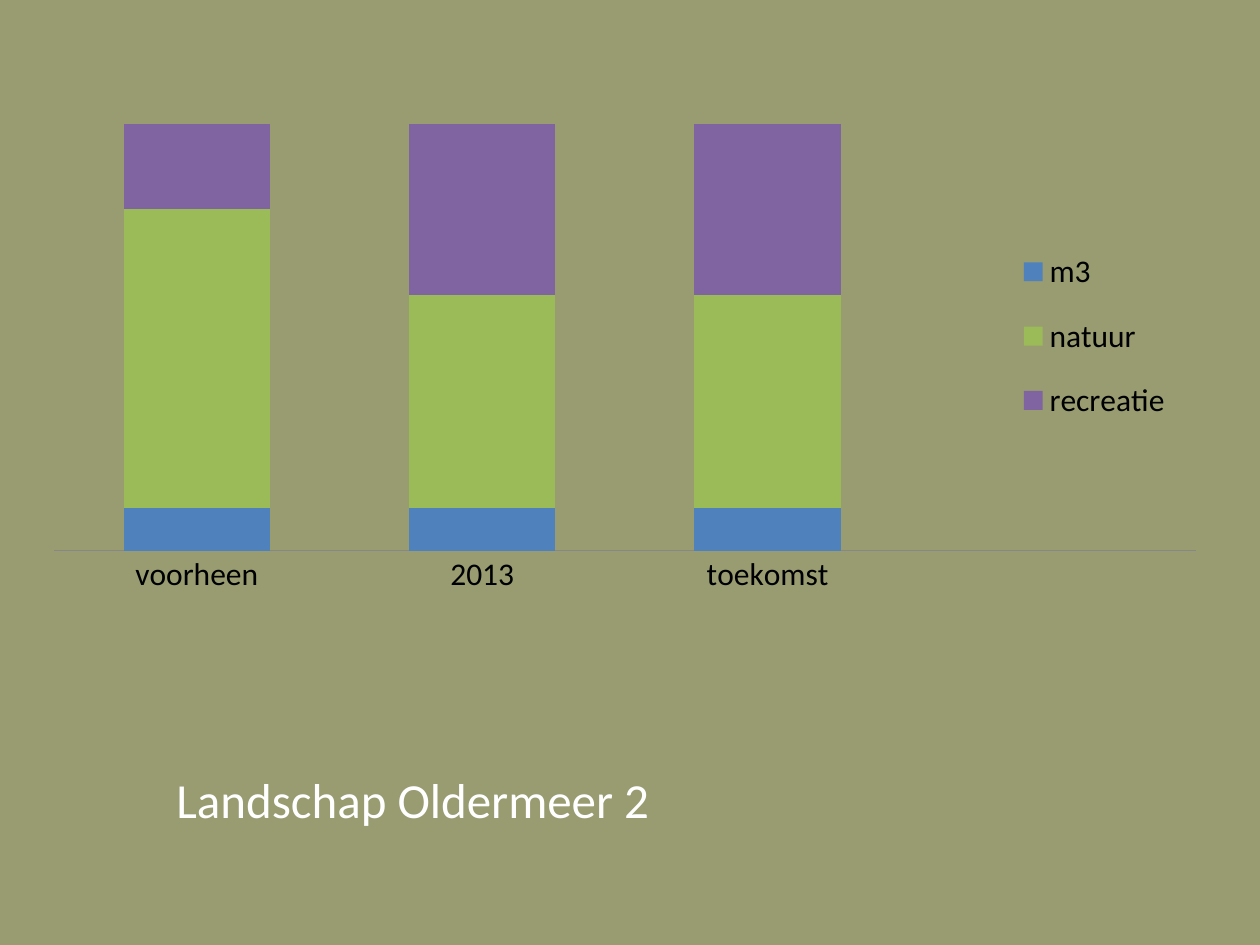
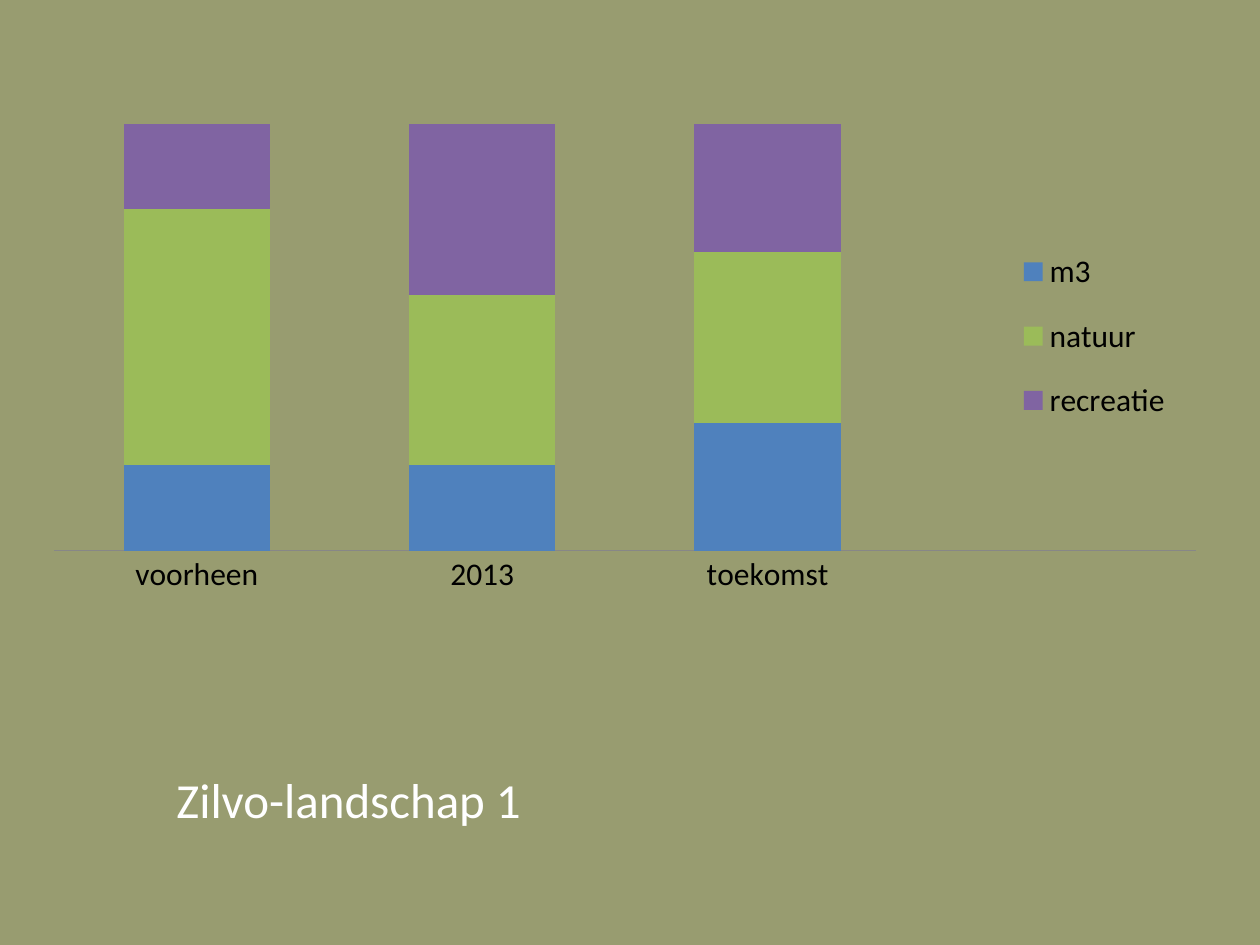
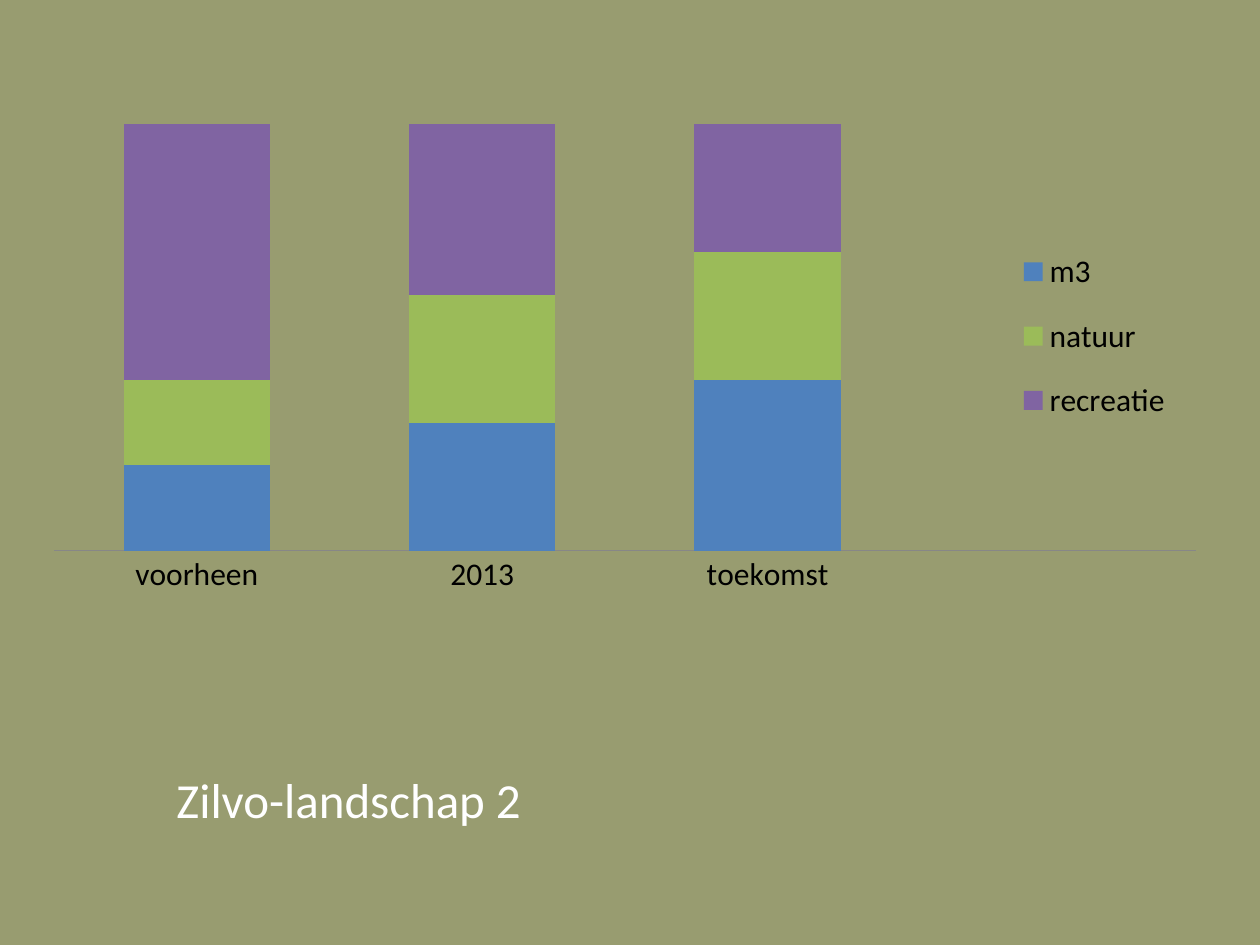
from dataclasses import dataclass

from lxml.etree import SubElement
from pptx import Presentation
from pptx.chart.data import CategoryChartData
from pptx.dml.color import RGBColor
from pptx.enum.chart import XL_CHART_TYPE as ChartType
from pptx.enum.chart import XL_LEGEND_POSITION as LegendPosition
from pptx.enum.chart import XL_TICK_LABEL_POSITION as LabelPosition
from pptx.enum.chart import XL_TICK_MARK as TickMark
from pptx.enum.text import MSO_ANCHOR as Anchor
from pptx.enum.text import MSO_AUTO_SIZE as AutoSize
from pptx.enum.text import PP_ALIGN as Align
from pptx.oxml.ns import qn
from pptx.util import Inches, Pt


@dataclass(frozen=True)
class Theme:
    """Colours, type and boxes (percentages of their parent) that all slides use."""
    background: str = "989C70"
    title_color: str = "FFFFFF"
    chart_text: str = "000000"
    axis_line: str = "878787"
    series_colors: tuple = ("4F81BD", "9BBB59", "8064A2")
    font: str = "Calibri"
    title_size: int = 28
    chart_size: int = 18
    chart_box: tuple = (2.8, 4.85, 93.7, 68.27)
    title_box: tuple = (13, 81.5, 66.9, 7.1)
    plot_box: tuple = (1.6, 12.1, 96.7, 66.2)
    legend_box: tuple = (81.7, 28, 16, 34)


THEME = Theme()
CATEGORIES = ("voorheen", "2013", "toekomst", "")
SERIES_NAMES = ("m3", "natuur", "recreatie")
LANDSCAPES = {
    "Landschap Oldermeer 2": ((10, 10, 10), (70, 50, 50), (20, 40, 40)),
    "Zilvo-landschap 1": ((20, 20, 30), (60, 40, 40), (20, 40, 30)),
    "Zilvo-landschap 2": ((20, 30, 40), (20, 30, 30), (60, 40, 30)),
}


def scale_box(presentation, box):
    """Turn percentages of the slide into left, top, width and height."""
    width, height = presentation.slide_width, presentation.slide_height
    return [round(share * size / 100) for share, size in zip(box, (width, height) * 2)]


def style_font(font, size, color):
    """Apply the theme font with a size and a colour."""
    font.name = THEME.font
    font.size = Pt(size)
    font.color.rgb = RGBColor.from_string(color)


def set_layout(parent, index, box, inner=False):
    """Place a chart part by percentages of the chart's size."""
    for old_layout in parent.findall(qn("c:layout")):
        parent.remove(old_layout)
    layout = SubElement(parent, qn("c:layout"))
    parent.insert(index, layout)
    manual = SubElement(layout, qn("c:manualLayout"))
    settings = [("layoutTarget", "inner")] if inner else []
    settings += [("xMode", "edge"), ("yMode", "edge")]
    settings += [(name, f"{share / 100:.3f}") for name, share in zip("xywh", box)]
    for name, value in settings:
        SubElement(manual, qn(f"c:{name}")).set("val", value)


def add_title(slide, text, box):
    """Fill the title placeholder and move it to its box."""
    title = slide.shapes.title
    title.left, title.top, title.width, title.height = box
    frame = title.text_frame
    frame.text = text
    frame.word_wrap = True
    frame.auto_size = AutoSize.SHAPE_TO_FIT_TEXT
    frame.vertical_anchor = Anchor.TOP
    paragraph = frame.paragraphs[0]
    paragraph.alignment = Align.LEFT
    paragraph.line_spacing = 0.9
    paragraph.space_before = Pt(0.2 * THEME.title_size)
    style_font(paragraph.font, THEME.title_size, THEME.title_color)


def style_axes(chart):
    """Hide the value axis and leave a plain category axis."""
    chart.value_axis.visible = False
    chart.value_axis.has_major_gridlines = False
    axis = chart.category_axis
    axis.major_tick_mark = axis.minor_tick_mark = TickMark.NONE
    axis.tick_label_position = LabelPosition.NEXT_TO_AXIS
    axis.format.line.color.rgb = RGBColor.from_string(THEME.axis_line)
    style_font(axis.tick_labels.font, THEME.chart_size, THEME.chart_text)


def add_shares_chart(slide, values, box):
    """Add the stacked columns with the share of each use."""
    data = CategoryChartData()
    data.categories = CATEGORIES
    for name, shares in zip(SERIES_NAMES, values):
        data.add_series(name, (*shares, None))
    chart = slide.shapes.add_chart(ChartType.COLUMN_STACKED_100, *box, data).chart
    style_font(chart.font, THEME.chart_size, THEME.chart_text)
    chart.has_title = False
    plot = chart.plots[0]
    plot.gap_width, plot.overlap = 95, 100
    plot.vary_by_categories = False
    for series, color in zip(plot.series, THEME.series_colors):
        series.format.fill.solid()
        series.format.fill.fore_color.rgb = RGBColor.from_string(color)
    style_axes(chart)
    chart.has_legend = True
    chart.legend.position = LegendPosition.TOP
    chart.legend.include_in_layout = False
    style_font(chart.legend.font, THEME.chart_size, THEME.chart_text)
    set_layout(chart.element.xpath(".//c:plotArea")[0], 0, THEME.plot_box, inner=True)
    set_layout(chart.element.xpath(".//c:legend")[0], 1, THEME.legend_box)


def main():
    """Build one slide per landscape and save the presentation."""
    presentation = Presentation()
    presentation.slide_width, presentation.slide_height = Inches(10), Inches(7.5)
    fill = presentation.slide_master.background.fill
    fill.solid()
    fill.fore_color.rgb = RGBColor.from_string(THEME.background)
    title_only = presentation.slide_layouts.get_by_name("Title Only")
    for name, values in LANDSCAPES.items():
        slide = presentation.slides.add_slide(title_only)
        add_shares_chart(slide, values, scale_box(presentation, THEME.chart_box))
        add_title(slide, name, scale_box(presentation, THEME.title_box))
    presentation.save("out.pptx")


if __name__ == "__main__":
    main()
